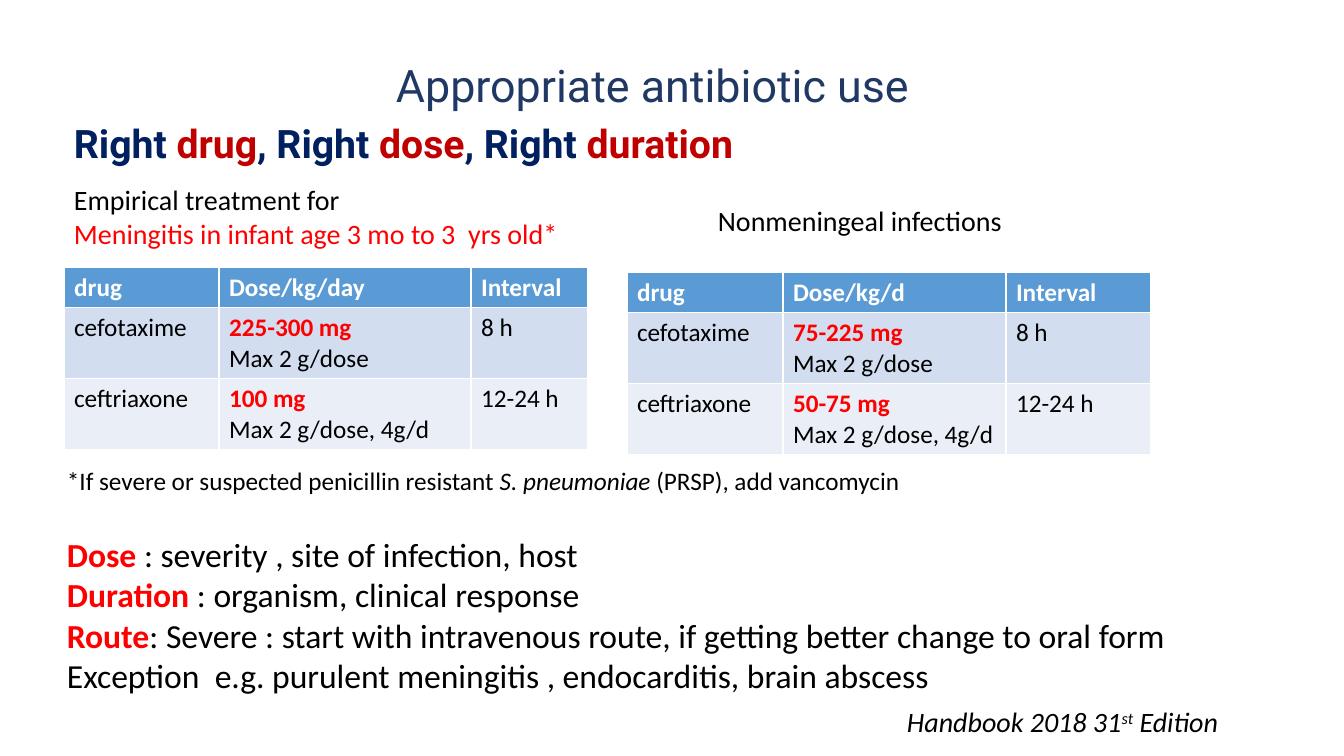
from pptx import Presentation
from pptx import util as u
from pptx.dml.color import RGBColor

PX = 914400 / 100.8
SLIDE = (1344, 756)

BLACK, RED, WHITE = "000000", "FF0000", "FFFFFF"
NAVY, CRIMSON = "002060", "C00000"
HEADER_FILL, ROW_FILLS = "5B9BD5", ("D2DEEF", "EAEFF7")

# A run is (text, colour, marks); marks: b bold, i italic, ^ superscript
TEXTS = [  # (left, top, width, height), font, size, paragraphs
    ((386, 53, 541, 64), "Roboto", 32,
     [[("Appropriate antibiotic use", "203864", "")]]),
    ((64, 114, 742, 57), "Roboto", 28,
     [[("Right ", NAVY, "b"), ("drug", CRIMSON, "b"),
       (", Right ", NAVY, "b"), ("dose", CRIMSON, "b"),
       (", Right ", NAVY, "b"), ("duration", CRIMSON, "b")]]),
    ((64, 178, 515, 78), "Calibri", 20,
     [[("Empirical treatment for", BLACK, "")],
      [("Meningitis in infant age 3 mo to 3  yrs old*", RED, "")]]),
    ((708, 199, 390, 44), "Calibri", 20,
     [[("Nonmeningeal infections", BLACK, "")]]),
    ((57, 460, 862, 40), "Calibri", 18,
     [[("*If severe or suspected penicillin resistant ", BLACK, ""),
       ("S. pneumoniae ", BLACK, "i"),
       ("(PRSP), add vancomycin", BLACK, "")]]),
    ((57, 529, 1128, 173), "Calibri", 24,
     [[("Dose ", RED, "b"), (": severity , site of infection, host", BLACK, "")],
      [("Duration", RED, "b"), (" : organism, clinical response", BLACK, "")],
      [("Route", RED, "b"),
       (": Severe : start with intravenous route, if getting better change to oral form",
        BLACK, "")],
      [("Exception  e.g. purulent meningitis , endocarditis, brain abscess", BLACK, "")]]),
    ((897, 700, 370, 44), "Calibri", 20,
     [[("Handbook 2018 31", BLACK, "i"), ("st", BLACK, "i^"),
       (" Edition", BLACK, "i")]]),
]

ROW_HEIGHTS = (40, 71, 71)
REGIMENS = [  # (left, top), column widths, dose heading, doses
    ((64, 267), (155, 252, 117), "Dose/kg/day", ("225-300 mg", "100 mg")),
    ((627, 272), (156, 223, 145), "Dose/kg/d", ("75-225 mg", "50-75 mg")),
]
DRUGS = [("cefotaxime", "Max 2 g/dose", "8 h"),
         ("ceftriaxone", "Max 2 g/dose, 4g/d", "12-24 h")]


def emu(*lengths):
    return [u.Emu(round(length * PX)) for length in lengths]


def rgb(colour):
    return RGBColor.from_string(colour)


def write(frame, paragraphs, font, size):
    frame.word_wrap = True
    for index, runs in enumerate(paragraphs):
        paragraph = frame.add_paragraph() if index else frame.paragraphs[0]
        for words, colour, marks in runs:
            run = paragraph.add_run()
            run.text = words
            run.font.name, run.font.size = font, u.Pt(size)
            run.font.color.rgb = rgb(colour)
            run.font.bold, run.font.italic = "b" in marks, "i" in marks
            if "^" in marks:
                run._r.get_or_add_rPr().set("baseline", "30000")


def regimen_rows(dose_heading, doses):
    """Each row is its fill and its cells, a cell being a list of paragraphs."""
    headings = ("drug", dose_heading, "Interval")
    yield HEADER_FILL, [[[(heading, WHITE, "b")]] for heading in headings]
    for fill, dose, (drug, limit, interval) in zip(ROW_FILLS, doses, DRUGS):
        yield fill, [[[(drug, BLACK, "")]],
                     [[(dose, RED, "b")], [(limit, BLACK, "")]],
                     [[(interval, BLACK, "")]]]


def add_regimen(slide, corner, widths, dose_heading, doses):
    area = emu(*corner, sum(widths), sum(ROW_HEIGHTS))
    table = slide.shapes.add_table(len(ROW_HEIGHTS), len(widths), *area).table
    for column, width in zip(table.columns, emu(*widths)):
        column.width = width
    for row, height, (fill, cells) in zip(table.rows, emu(*ROW_HEIGHTS),
                                          regimen_rows(dose_heading, doses)):
        row.height = height
        for cell, paragraphs in zip(row.cells, cells):
            cell.fill.solid()
            cell.fill.fore_color.rgb = rgb(fill)
            write(cell.text_frame, paragraphs, "Calibri", 18)


def main():
    deck = Presentation()
    deck.slide_width, deck.slide_height = emu(*SLIDE)
    slide = deck.slides.add_slide(deck.slide_layouts[6])
    for area, font, size, paragraphs in TEXTS:
        write(slide.shapes.add_textbox(*emu(*area)).text_frame, paragraphs, font, size)
    for regimen in REGIMENS:
        add_regimen(slide, *regimen)
    deck.save("out.pptx")


if __name__ == "__main__":
    main()
